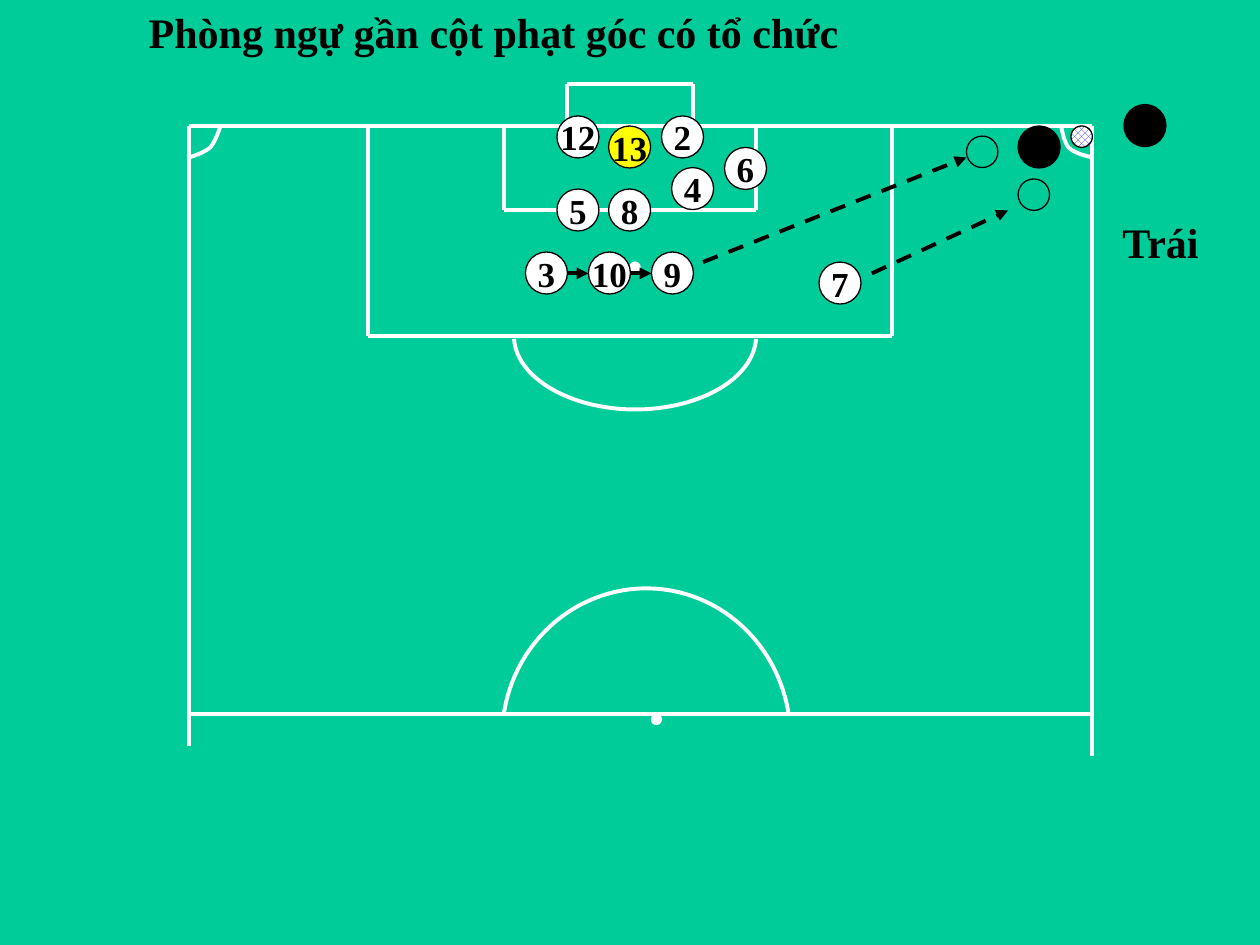
from dataclasses import dataclass
from typing import Any

from lxml import etree
from pptx import Presentation
from pptx import util as u
from pptx.dml.color import RGBColor
from pptx.enum import dml, shapes, text
from pptx.oxml.ns import qn

Point = tuple[float, float]
Oval = shapes.MSO_SHAPE.OVAL


@dataclass(frozen=True)
class Theme:
    grass: RGBColor = RGBColor(0x00, 0xCC, 0x99)
    white: RGBColor = RGBColor(0xFF, 0xFF, 0xFF)
    black: RGBColor = RGBColor(0x00, 0x00, 0x00)
    keeper: RGBColor = RGBColor(0xFF, 0xFF, 0x00)
    ball: RGBColor = RGBColor(0x33, 0x33, 0xFF)
    font: str = "Times New Roman"
    heading: int = 24
    number: int = 20
    thick: float = 2.25
    thin: float = 0.75


@dataclass(frozen=True)
class Player:
    number: int
    left: float
    top: float


@dataclass(frozen=True)
class Spot:
    left: float
    top: float
    size: float
    fill: RGBColor
    outline: RGBColor


@dataclass(frozen=True)
class Box:
    """Three-sided frame that stands on the goal line."""
    left: float
    right: float
    far: float


THEME = Theme()
GOAL_LINE, HALFWAY = 1, 5.67
TOUCH_LEFT, TOUCH_RIGHT = 1.5, 8.67
PLAYER_SIZE = 1 / 3
KEEPER_NUMBER = 13

BOXES = [Box(4.5, 5.5, 0.67), Box(4, 6, 1.67), Box(2.92, 7.08, 2.67)]

# Each curve is a start point followed by cubic Bézier triples
CURVES: list[list[Point]] = [
    [(6.26, 5.67), (6.17, 5.09), (5.69, 4.67), (5.13, 4.67),
     (4.57, 4.67), (4.09, 5.09), (4, 5.66)],
    [(6, 2.69), (5.98, 3), (5.56, 3.25), (5.04, 3.25),
     (4.53, 3.25), (4.1, 3), (4.08, 2.69)],
    [(8.67, 1.25), (8.59, 1.23), (8.52, 1.21), (8.48, 1.17),
     (8.44, 1.12), (8.43, 1.03), (8.42, 1)],
    [(1.5, 1.25), (1.56, 1.23), (1.62, 1.21), (1.67, 1.17),
     (1.71, 1.12), (1.74, 1.03), (1.75, 1)],
]

FIELD_SPOTS = [Spot(5.17, 5.67, 0.08, THEME.white, THEME.white),
               Spot(5, 2.08, 0.08, THEME.white, THEME.white)]
TARGETS = [Spot(8.08, 1.42, 0.25, THEME.grass, THEME.black),
           Spot(7.67, 1.08, 0.25, THEME.grass, THEME.black)]
OPPONENTS = [Spot(8.92, 0.83, PLAYER_SIZE, THEME.black, THEME.black),
             Spot(8.08, 1, PLAYER_SIZE, THEME.black, THEME.black)]
RUNS: list[tuple[Point, Point]] = [
    ((6.92, 2.17), (8, 1.67)), ((5.58, 2.08), (7.67, 1.25)),
    ((5, 2.17), (5.17, 2.17)), ((4.5, 2.17), (4.67, 2.17)),
]
PLAYERS = [
    Player(13, 4.83, 1), Player(2, 5.25, 0.92), Player(12, 4.42, 0.92),
    Player(6, 5.75, 1.17), Player(7, 6.5, 2.08), Player(9, 5.17, 2),
    Player(10, 4.67, 2), Player(3, 4.17, 2), Player(5, 4.42, 1.5),
    Player(8, 4.83, 1.5), Player(4, 5.33, 1.33),
]


def apply(target: Any, values: dict[str, Any]) -> None:
    for name, value in values.items():
        setattr(target, name, value)


def draw_line(slide: Any, start: Point, end: Point, color: RGBColor = THEME.white) -> Any:
    line = slide.shapes.add_connector(
        shapes.MSO_CONNECTOR.STRAIGHT, *map(u.Inches, (*start, *end)))
    line.line.color.rgb = color
    line.line.width = u.Pt(THEME.thick)
    etree.SubElement(line._element.spPr, qn("a:effectLst"))
    return line


def draw_run(slide: Any, start: Point, end: Point) -> None:
    run = draw_line(slide, start, end, THEME.black)
    run.line.dash_style = dml.MSO_LINE.DASH
    etree.SubElement(run.line._get_or_add_ln(), qn("a:tailEnd"), type="triangle")


def draw_box(slide: Any, box: Box) -> None:
    for x in (box.left, box.right):
        draw_line(slide, (x, GOAL_LINE), (x, box.far))
    draw_line(slide, (box.left, box.far), (box.right, box.far))


def draw_curve(slide: Any, points: list[Point]) -> None:
    knots = [(u.Inches(x), u.Inches(y)) for x, y in points]
    anchors = knots[::3]
    builder = slide.shapes.build_freeform(*anchors[0])
    builder.add_line_segments(anchors[1:], close=False)
    curve = builder.convert_to_shape()
    # Bend each straight segment into a cubic Bézier
    segments = list(curve._element.iter(qn("a:lnTo")))
    for index, segment in enumerate(segments):
        bend = etree.Element(qn("a:cubicBezTo"))
        for x, y in knots[3 * index + 1:3 * index + 4]:
            etree.SubElement(bend, qn("a:pt"), x=str(x - curve.left), y=str(y - curve.top))
        segment.getparent().replace(segment, bend)
    curve.shadow.inherit = False
    curve.fill.background()
    curve.line.color.rgb = THEME.white
    curve.line.width = u.Pt(THEME.thick)


def draw_spot(slide: Any, spot: Spot, kind: Any = Oval) -> Any:
    circle = slide.shapes.add_shape(
        kind, *map(u.Inches, (spot.left, spot.top, spot.size, spot.size)))
    circle.shadow.inherit = False
    circle.fill.solid()
    circle.fill.fore_color.rgb = spot.fill
    circle.line.color.rgb = spot.outline
    circle.line.width = u.Pt(THEME.thin)
    return circle


def write(frame: Any, words: str, size: int, align: Any, layout: dict[str, Any]) -> None:
    apply(frame, {"auto_size": text.MSO_AUTO_SIZE.NONE, **layout})
    paragraph = frame.paragraphs[0]
    paragraph.text = words
    paragraph.alignment = align
    font = paragraph.runs[0].font
    apply(font, {"name": THEME.font, "size": u.Pt(size), "bold": True})
    font.color.rgb = THEME.black


def draw_player(slide: Any, player: Player) -> None:
    shirt = THEME.keeper if player.number == KEEPER_NUMBER else THEME.white
    token = draw_spot(slide, Spot(player.left, player.top, PLAYER_SIZE, shirt, THEME.black),
                      shapes.MSO_SHAPE.FLOWCHART_CONNECTOR)
    write(token.text_frame, str(player.number), THEME.number, text.PP_ALIGN.CENTER,
          {"word_wrap": False, "vertical_anchor": text.MSO_ANCHOR.MIDDLE})


def main() -> None:
    deck = Presentation()
    apply(deck, {"slide_width": u.Inches(10), "slide_height": u.Inches(7.5)})
    slide = deck.slides.add_slide(deck.slide_layouts[5])
    slide.background.fill.solid()
    slide.background.fill.fore_color.rgb = THEME.grass

    # Pitch markings
    for y in (GOAL_LINE, HALFWAY):
        draw_line(slide, (TOUCH_LEFT, y), (TOUCH_RIGHT, y))
    for x, bottom in ((TOUCH_LEFT, 5.92), (TOUCH_RIGHT, 6)):
        draw_line(slide, (x, GOAL_LINE), (x, bottom))
    for box in BOXES:
        draw_box(slide, box)
    for spot in FIELD_SPOTS:
        draw_spot(slide, spot)
    for curve in CURVES:
        draw_curve(slide, curve)

    # Ball in the corner
    ball = draw_spot(slide, Spot(8.5, 1, 0.17, THEME.white, THEME.black))
    ball.fill.patterned()
    ball.fill.pattern = dml.MSO_PATTERN.LARGE_CHECKER_BOARD
    ball.fill.fore_color.rgb = THEME.ball
    ball.fill.back_color.rgb = THEME.white

    # Heading and side label
    heading = slide.shapes.title
    apply(heading, {"left": u.Inches(0.67), "top": u.Inches(0),
                    "width": u.Inches(9), "height": u.Inches(0.5)})
    side = slide.shapes.add_textbox(*map(u.Inches, (8.81, 1.67, 1.17, 0.5)))
    for label, words, margin in ((heading, "Phòng ngự gần cột phạt góc có tổ chức", 0.51),
                                 (side, "Trái", 0.1)):
        write(label.text_frame, words, THEME.heading, text.PP_ALIGN.LEFT,
              {"word_wrap": True, "vertical_anchor": text.MSO_ANCHOR.TOP,
               "margin_left": u.Inches(margin)})

    # Runs, their targets and all the players
    for start, end in RUNS:
        draw_run(slide, start, end)
    for spot in TARGETS + OPPONENTS:
        draw_spot(slide, spot)
    for player in PLAYERS:
        draw_player(slide, player)

    deck.save("out.pptx")


if __name__ == "__main__":
    main()
